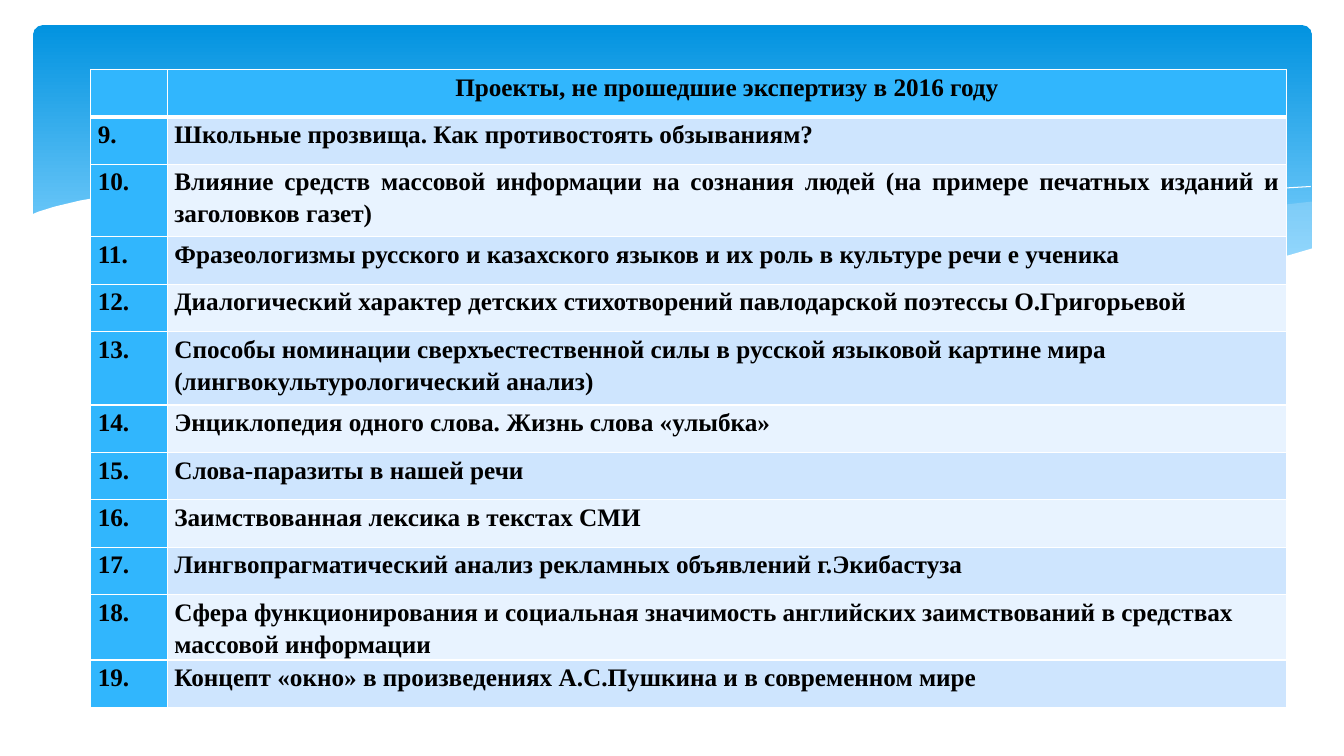
"""Builds a slide with a table of projects over a blue wave banner."""
from dataclasses import dataclass
from typing import Optional

from lxml import etree
from pptx import Presentation
from pptx import util as u
from pptx.dml.color import RGBColor
from pptx.enum import shapes, text
from pptx.oxml.ns import qn

Points = list[tuple[float, float]]


@dataclass(frozen=True)
class Theme:
    """Colours, font and type size of the slide."""
    sky_top: str = "0293E0"
    sky_bottom: str = "83D3FE"
    mist: str = "C6E7FC"
    white: str = "FFFFFF"
    ink: str = "000000"
    accent: str = "31B6FD"
    bands: tuple[str, str] = ("CEE5FE", "E8F3FF")
    font: str = "Times New Roman"
    size: int = 18


@dataclass(frozen=True)
class Wave:
    """An outline in inches, either filled or drawn as a hairline."""
    points: Points
    fill: Optional[str] = None
    opacity: int = 100


@dataclass(frozen=True)
class Project:
    """One table row."""
    title: str
    height: float = 0.47
    align: text.PP_ALIGN = text.PP_ALIGN.LEFT


THEME = Theme()
FIRST_NUMBER = 9
COLUMNS = (0.76, 11.1)
HEADER = Project("Проекты, не прошедшие экспертизу в 2016 году", align=text.PP_ALIGN.CENTER)
PROJECTS = [
    Project("Школьные прозвища. Как противостоять обзываниям?"),
    Project("Влияние средств массовой информации на сознания людей "
            "(на примере печатных изданий и заголовков газет)", 0.72, text.PP_ALIGN.JUSTIFY),
    Project("Фразеологизмы русского и казахского языков и их роль в культуре речи е ученика"),
    Project("Диалогический характер детских стихотворений павлодарской поэтессы О.Григорьевой"),
    Project("Способы номинации сверхъестественной силы в русской языковой картине мира "
            "(лингвокультурологический анализ)", 0.73),
    Project("Энциклопедия одного слова. Жизнь слова «улыбка»"),
    Project("Слова-паразиты в нашей речи"),
    Project("Заимствованная лексика в текстах СМИ"),
    Project("Лингвопрагматический анализ рекламных объявлений г.Экибастуза"),
    Project("Сфера функционирования и социальная значимость английских заимствований "
            "в средствах массовой информации", 0.65),
    Project("Концепт «окно» в произведениях А.С.Пушкина и в современном мире"),
]
WAVES = [
    Wave([(13.01, 2), (12.65, 2.04), (12.08, 2.13), (11.47, 2.23), (10.73, 2.37),
          (10.05, 2.48), (9.41, 2.57), (8.82, 2.65), (9.4, 2.71), (9.93, 2.75),
          (10.71, 2.78), (11.26, 2.77), (11.74, 2.73), (12.18, 2.67), (12.57, 2.59),
          (13.01, 2.47)], THEME.mist, 29),
    Wave([(11.9, 2.73), (11.16, 2.65), (10.34, 2.54), (9.41, 2.4), (8.39, 2.22),
          (7.78, 2.11), (7.21, 2.03), (6.52, 1.94), (5.89, 1.89), (5.32, 1.86),
          (4.82, 1.85), (4.37, 1.87), (3.82, 1.91), (4.56, 1.99), (5.39, 2.11),
          (5.99, 2.22), (7.06, 2.4), (8.02, 2.55), (8.87, 2.66), (9.63, 2.74),
          (10.3, 2.77), (10.9, 2.78), (11.43, 2.77)], THEME.mist, 40),
    Wave([(4.12, 1.95), (4.58, 1.9), (5.16, 1.87), (5.77, 1.87), (6.52, 1.9),
          (7.42, 1.97), (8.48, 2.08), (9.7, 2.26), (10.6, 2.41), (11.58, 2.61), (12.1, 2.72)]),
    Wave([(8.18, 2.57), (8.7, 2.46), (9.27, 2.35), (9.97, 2.23), (10.75, 2.1),
          (11.55, 1.99), (12.13, 1.92), (12.67, 1.87), (13, 1.85)]),
    Wave([(13.03, 2.46), (12.79, 2.53), (12.4, 2.62), (11.98, 2.69), (11.51, 2.74),
          (10.97, 2.77), (10.37, 2.76), (9.69, 2.72), (8.91, 2.65), (8.04, 2.54),
          (7.06, 2.39), (5.96, 2.2), (5.21, 2.07), (4.53, 1.97), (3.9, 1.9),
          (3.33, 1.86), (2.82, 1.84), (2.14, 1.84), (1.58, 1.87), (1.13, 1.93),
          (0.79, 1.99), (0.54, 2.05), (0.38, 2.1), (0.31, 2.13), (0.31, 3.29), (13.03, 3.29)],
         THEME.white),
]


def rgb(value: str) -> RGBColor:
    """Turn a hex string into a colour."""
    return RGBColor.from_string(value)


def add_banner(s) -> None:
    """Draw the rounded blue gradient banner."""
    sp = s.shapes.add_shape(shapes.MSO_SHAPE.ROUNDED_RECTANGLE, u.Inches(0.33), u.Inches(0.25),
                            u.Inches(12.68), u.Inches(2.7))
    sp.adjustments[0] = 0.034
    sp.shadow.inherit = False
    sp.line.fill.background()
    sp.fill.gradient()
    sp.fill.gradient_angle = 270
    stops = ((0, THEME.sky_top), (0.9, THEME.sky_bottom))
    for stop, (position, color) in zip(sp.fill.gradient_stops, stops):
        stop.position = position
        stop.color.rgb = rgb(color)


def add_wave(s, wave: Wave) -> None:
    """Draw one wave as a translucent area or a white hairline."""
    start, *rest = [(u.Inches(x), u.Inches(y)) for x, y in wave.points]
    builder = s.shapes.build_freeform(*start)
    builder.add_line_segments(rest, close=wave.fill is not None)
    sp = builder.convert_to_shape()
    sp.shadow.inherit = False
    if wave.fill is None:
        sp.fill.background()
        sp.line.color.rgb = rgb(THEME.white)
        sp.line.width = u.Pt(0)
        return
    sp.line.fill.background()
    sp.fill.solid()
    sp.fill.fore_color.rgb = rgb(wave.fill)
    if wave.opacity < 100:
        color = sp.fill._xPr.find(f".//{qn('a:srgbClr')}")
        etree.SubElement(color, qn("a:alpha"), val=str(wave.opacity * 1000))


def set_borders(cell, *, top: int = 1, bottom: int = 1) -> None:
    """Give a cell white borders with widths in points."""
    tc_pr = cell._tc.get_or_add_tcPr()
    for side, width in (("L", 1), ("R", 1), ("T", top), ("B", bottom)):
        ln = etree.SubElement(tc_pr, qn(f"a:ln{side}"), w=str(u.Pt(width)))
        fill = etree.SubElement(ln, qn("a:solidFill"))
        etree.SubElement(fill, qn("a:srgbClr"), val=THEME.white)


def write(cell, content: str, *, align: text.PP_ALIGN = text.PP_ALIGN.LEFT,
          size: int = THEME.size, color: str = THEME.ink, bold: bool = True) -> None:
    """Put formatted text into a cell."""
    cell.margin_left = cell.margin_right = u.Inches(0.07)
    cell.margin_top = cell.margin_bottom = 0
    p = cell.text_frame.paragraphs[0]
    p.alignment = align
    p.line_spacing = 1.15
    if not content:
        p.font.size = u.Pt(size)
        return
    r = p.add_run()
    r.text = content
    r.font.name = THEME.font
    r.font.size = u.Pt(size)
    r.font.bold = bold
    r.font.color.rgb = rgb(color)


def add_projects(s) -> None:
    """Draw the numbered table of projects."""
    rows = [HEADER, *PROJECTS]
    frame = s.shapes.add_table(len(rows), len(COLUMNS), u.Inches(0.9), u.Inches(0.69),
                               u.Inches(sum(COLUMNS)), u.Inches(sum(row.height for row in rows)))
    table = frame.table
    for column, width in zip(table.columns, COLUMNS):
        column.width = u.Inches(width)
    for i, row in enumerate(rows):
        table.rows[i].height = u.Inches(row.height)
        number = f"{FIRST_NUMBER + i - 1}." if i else ""
        title_fill = THEME.bands[(i - 1) % 2] if i else THEME.accent
        contents = ((number, text.PP_ALIGN.LEFT, THEME.accent), (row.title, row.align, title_fill))
        for cell, (content, align, fill) in zip(table.rows[i].cells, contents):
            set_borders(cell, top=3 if i == 1 else 1, bottom=3 if i == 0 else 1)
            cell.fill.solid()
            cell.fill.fore_color.rgb = rgb(fill)
            write(cell, content, align=align)


def main() -> None:
    """Build and save the slide."""
    prs = Presentation()
    prs.slide_width, prs.slide_height = u.Inches(13.33), u.Inches(7.5)
    s = prs.slides.add_slide(prs.slide_layouts[6])
    add_banner(s)
    for wave in WAVES:
        add_wave(s, wave)
    add_projects(s)
    prs.save("out.pptx")


if __name__ == "__main__":
    main()
